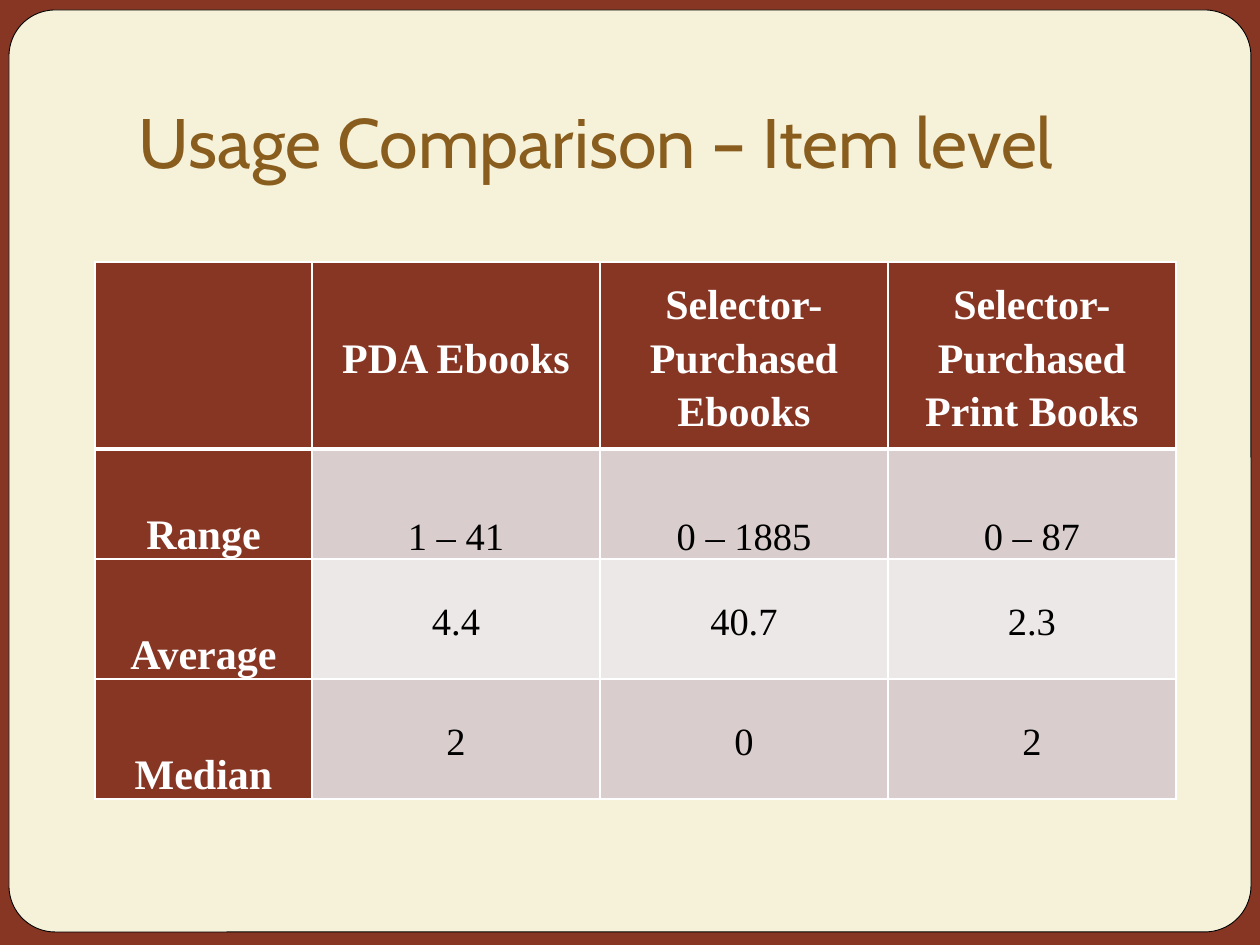
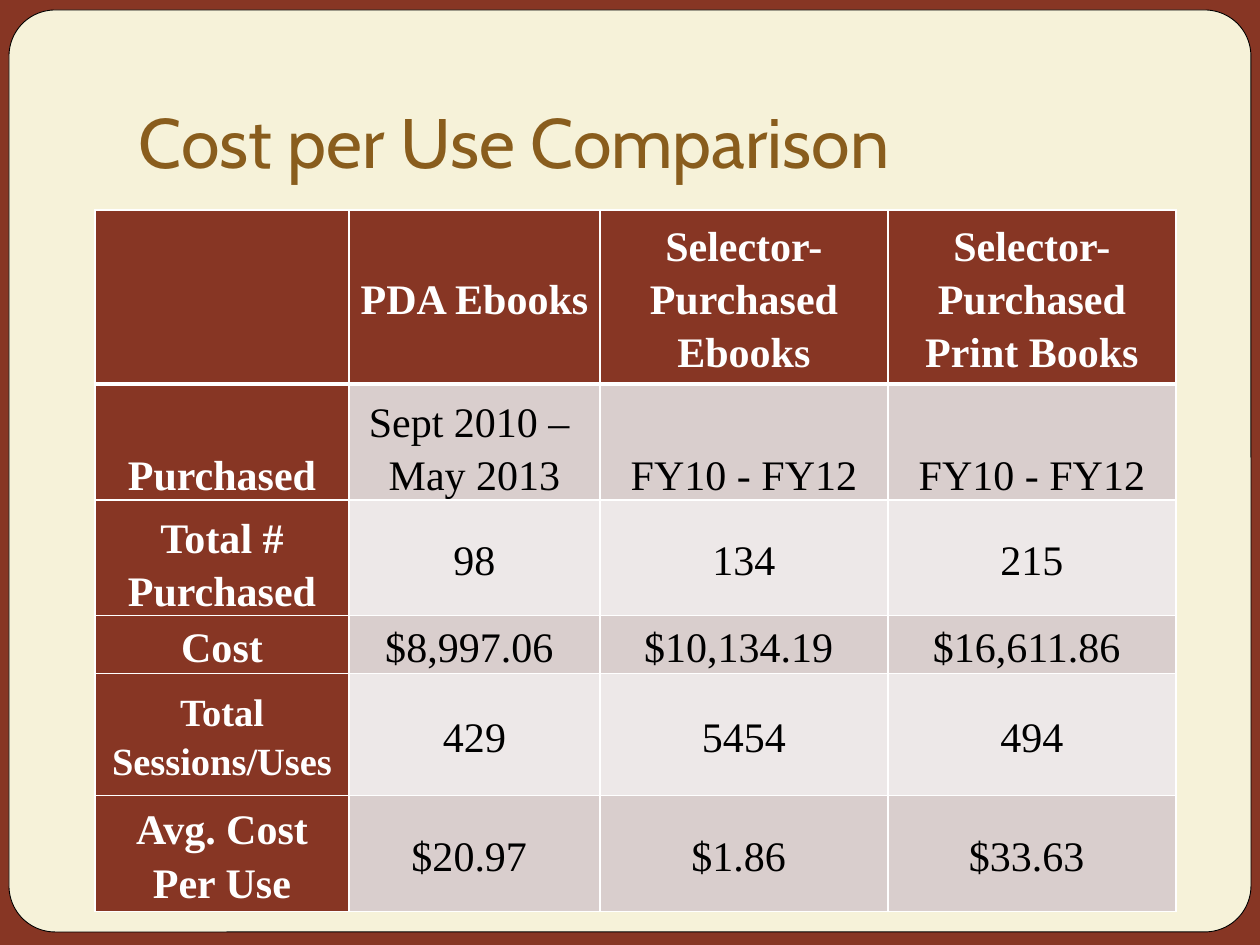
from dataclasses import dataclass

from lxml.etree import SubElement
from pptx import Presentation
from pptx.dml.color import RGBColor
from pptx.enum.shapes import MSO_SHAPE
from pptx.enum.text import MSO_ANCHOR, PP_ALIGN
from pptx.oxml.ns import qn
from pptx.util import Emu, Pt

# Scale and page
EMU_PER_PX = 914400 / 126
PAGE_WIDTH, PAGE_HEIGHT = 1260, 945

# Shared look
BRICK = RGBColor(0x87, 0x36, 0x24)
CREAM = RGBColor(0xF6, 0xF2, 0xD9)
OCHRE = RGBColor(0x89, 0x5D, 0x1D)
BAND_DARK = RGBColor(0xD9, 0xCE, 0xCD)
BAND_LIGHT = RGBColor(0xED, 0xE8, 0xE8)
WHITE = RGBColor(0xFF, 0xFF, 0xFF)
BLACK = RGBColor(0x00, 0x00, 0x00)
TITLE_FONT = "Cabin"
TABLE_FONT = "Times New Roman"

TABLE_LEFT = 95
CELL_MARGIN = 9
BOTTOM, MIDDLE = MSO_ANCHOR.BOTTOM, MSO_ANCHOR.MIDDLE
HEADINGS = ["", "PDA Ebooks", "Selector-Purchased Ebooks", "Selector-Purchased Print Books"]


@dataclass
class Row:
    texts: list
    height: int
    label_anchor: int = MIDDLE
    value_anchor: int = MIDDLE
    label_size: int = 24


def px(length):
    return Emu(round(length * EMU_PER_PX))


def write_text(frame, text, font=TABLE_FONT, size=24, color=BLACK, bold=False,
               align=PP_ALIGN.LEFT, spacing=1.0):
    for index, line in enumerate(text.split("\n")):
        paragraph = frame.add_paragraph() if index else frame.paragraphs[0]
        paragraph.alignment = align
        paragraph.line_spacing = spacing
        run = paragraph.add_run()
        run.text = line
        run.font.name = font
        run.font.size = Pt(size)
        run.font.bold = bold
        run.font.color.rgb = color


def add_panel(slide, preset, left, top, width, height, fill):
    shape = slide.shapes.add_shape(preset, px(left), px(top), px(width), px(height))
    shape.shadow.inherit = False
    shape.fill.solid()
    shape.fill.fore_color.rgb = fill
    shape.line.fill.background()
    return shape


def add_frame(slide):
    add_panel(slide, MSO_SHAPE.RECTANGLE, 0, 0, PAGE_WIDTH, PAGE_HEIGHT, BRICK)
    card = add_panel(slide, MSO_SHAPE.ROUNDED_RECTANGLE, 9, 10, 1242, 922, CREAM)
    card.adjustments[0] = 0.05
    card.line.color.rgb = BLACK
    card.line.width = Pt(0.5)


def add_title(slide, text):
    frame = slide.shapes.add_textbox(px(126), px(38), px(1071), px(157)).text_frame
    frame.word_wrap = True
    frame.vertical_anchor = BOTTOM
    frame.margin_left = frame.margin_right = frame.margin_bottom = px(13)
    frame.margin_top = px(6)
    write_text(frame, text, font=TITLE_FONT, size=40, color=OCHRE)


def set_borders(cell, **widths):
    properties = cell._tc.get_or_add_tcPr()
    for side in "LRTB":
        width = Pt(widths.get(side, 1))
        line = SubElement(properties, qn(f"a:ln{side}"), w=str(width))
        fill = SubElement(line, qn("a:solidFill"))
        SubElement(fill, qn("a:srgbClr"), val=str(WHITE))


def fill_cell(cell, text, fill, anchor, **text_format):
    cell.fill.solid()
    cell.fill.fore_color.rgb = fill
    cell.vertical_anchor = anchor
    cell.margin_left = cell.margin_right = px(CELL_MARGIN)
    cell.margin_top = cell.margin_bottom = 0
    if text:
        write_text(cell.text_frame, text, align=PP_ALIGN.CENTER, spacing=1.15, **text_format)


def add_comparison_table(slide, top, widths, header_height, rows, value_size):
    all_rows = [Row(HEADINGS, header_height)] + rows
    height = sum(row.height for row in all_rows)
    table = slide.shapes.add_table(len(all_rows), len(widths), px(TABLE_LEFT), px(top),
                                   px(sum(widths)), px(height)).table
    for column, width in zip(table.columns, widths):
        column.width = px(width)
    for row_index, row in enumerate(all_rows):
        table.rows[row_index].height = px(row.height)
        band = BAND_DARK if row_index % 2 else BAND_LIGHT
        # A thick rule divides the header from the body
        rule = {0: {"B": 3}, 1: {"T": 3}}.get(row_index, {})
        for column_index, text in enumerate(row.texts):
            cell = table.cell(row_index, column_index)
            set_borders(cell, **rule)
            if row_index == 0 or column_index == 0:
                fill_cell(cell, text, BRICK, row.label_anchor,
                          size=row.label_size, color=WHITE, bold=True)
            else:
                fill_cell(cell, text, band, row.value_anchor, size=value_size)


def add_slide(presentation, title):
    slide = presentation.slides.add_slide(presentation.slide_layouts[6])
    add_frame(slide)
    add_title(slide, title)
    return slide


def main():
    presentation = Presentation()
    presentation.slide_width = px(PAGE_WIDTH)
    presentation.slide_height = px(PAGE_HEIGHT)

    # Usage by item
    slide = add_slide(presentation, "Usage Comparison – Item level")
    add_comparison_table(slide, 262, [217, 288, 288, 288], 187, [
        Row(["Range", "1 – 41", "0 – 1885", "0 – 87"], 110, BOTTOM, BOTTOM),
        Row(["Average", "4.4", "40.7", "2.3"], 120, BOTTOM),
        Row(["Median", "2", "0", "2"], 120, BOTTOM),
    ], value_size=22)

    # Cost per use
    slide = add_slide(presentation, "Cost per Use Comparison")
    add_comparison_table(slide, 210, [254, 251, 288, 288], 166, [
        Row(["Purchased", "Sept 2010 – \nMay 2013", "FY10 - FY12", "FY10 - FY12"],
            110, BOTTOM, BOTTOM),
        Row(["Total # Purchased", "98", "134", "215"], 110, BOTTOM),
        Row(["Cost", "$8,997.06 ", "$10,134.19 ", "$16,611.86 "], 54),
        Row(["Total Sessions/Uses", "429", "5454", "494"], 122, label_size=22),
        Row(["Avg. Cost Per Use", "$20.97 ", "$1.86 ", "$33.63 "], 110),
    ], value_size=24)

    presentation.save("out.pptx")


if __name__ == "__main__":
    main()
